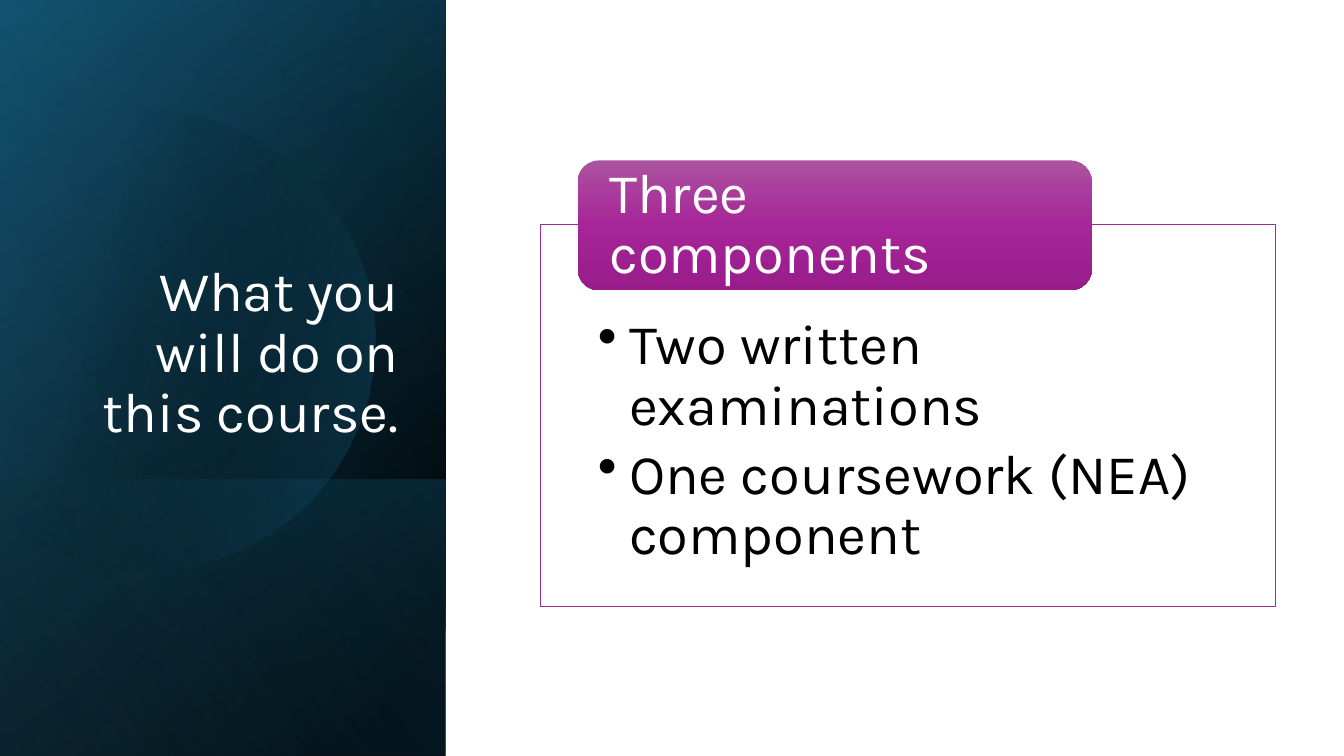
import math
from dataclasses import dataclass
from typing import NamedTuple

from lxml import etree
from pptx import Presentation
from pptx import util as u
from pptx.dml.color import RGBColor
from pptx.enum import shapes, text
from pptx.oxml import ns

PX = 9144


@dataclass(frozen=True)
class Theme:
    font: str = "Karla"
    size: int = 40
    light: str = "FFFFFF"
    dark: str = "000000"
    navy: str = "104862"
    blue: str = "156082"
    sky: str = "46B1E1"
    purple: str = "A02B93"
    header: tuple[str, str, str] = ("AC53A0", "A62598", "991C8B")


class Box(NamedTuple):
    left: int
    top: int
    width: int
    height: int


class Stop(NamedTuple):
    position: int
    color: str
    alpha: int = 100


class Gradient(NamedTuple):
    angle: int
    stops: tuple[Stop, ...]


class Layer(NamedTuple):
    box: Box
    gradient: Gradient


class Circle(NamedTuple):
    x: int
    y: int
    radius: int


class Label(NamedTuple):
    lines: tuple[str, ...]
    color: str
    insets: tuple[int, int, int, int]
    anchor: text.MSO_ANCHOR
    align: text.PP_ALIGN = text.PP_ALIGN.LEFT
    bullet_indent: int = 0
    space_after: int = 0


THEME = Theme()
SIDEBAR = Box(-154, 154, 750, 442)
LAYERS = (
    Layer(SIDEBAR, Gradient(50, (Stop(8, THEME.dark), Stop(100, THEME.navy)))),
    Layer(SIDEBAR, Gradient(30, (Stop(0, THEME.dark, 0), Stop(99, THEME.blue, 46)))),
    Layer(Box(84, 392, 274, 442), Gradient(130, (Stop(2, THEME.blue, 29), Stop(100, THEME.dark, 30)))),
)
GLOW = Layer(SIDEBAR, Gradient(120, (Stop(0, THEME.dark, 0), Stop(99, THEME.sky, 11))))
DISC = Circle(144, 338, 228)
DISC_GRADIENT = Gradient(14, (Stop(29, THEME.dark, 0), Stop(100, THEME.blue, 43)))
HEADER_GRADIENT = Gradient(90, tuple(Stop(50 * i, color) for i, color in enumerate(THEME.header)))

TITLE = Label(("What you will do on this course.",), THEME.light, (10, 5, 10, 5),
              text.MSO_ANCHOR.BOTTOM, text.PP_ALIGN.RIGHT)
HEADER = Label(("Three components",), THEME.light, (25, 6, 25, 6), text.MSO_ANCHOR.MIDDLE)
CONTENT = Label(("Two written examinations", "One coursework (NEA) component"), THEME.dark,
                (57, 91, 57, 31), text.MSO_ANCHOR.TOP, bullet_indent=31, space_after=6)


def emu(box: Box) -> list[int]:
    return [length * PX for length in box]


def fill_gradient(shape, gradient: Gradient) -> None:
    shape.shadow.inherit = False
    shape.line.fill.background()
    shape.fill.background()
    grad = etree.Element(ns.qn("a:gradFill"), rotWithShape="1")
    stops = etree.SubElement(grad, ns.qn("a:gsLst"))
    for stop in gradient.stops:
        entry = etree.SubElement(stops, ns.qn("a:gs"), pos=str(stop.position * 1000))
        color = etree.SubElement(entry, ns.qn("a:srgbClr"), val=stop.color)
        etree.SubElement(color, ns.qn("a:alpha"), val=str(stop.alpha * 1000))
    etree.SubElement(grad, ns.qn("a:lin"), ang=str(gradient.angle * 60000), scaled="0")
    properties = shape._element.spPr
    properties.replace(properties.find(ns.qn("a:noFill")), grad)


def add_layer(page, layer: Layer) -> None:
    shape = page.shapes.add_shape(shapes.MSO_SHAPE.RECTANGLE, *emu(layer.box))
    shape.rotation = 90
    shape._element.spPr.find(ns.qn("a:xfrm")).set("flipH", "1")
    fill_gradient(shape, layer.gradient)


def add_disc(page, circle: Circle, gradient: Gradient, steps: int = 90) -> None:
    reach = math.acos(-circle.x / circle.radius)
    angles = [reach * (2 * i / steps - 1) for i in range(steps + 1)]
    points = [(circle.x + circle.radius * math.cos(a), circle.y + circle.radius * math.sin(a))
              for a in angles]
    builder = page.shapes.build_freeform(*points[0], scale=PX)
    builder.add_line_segments(points[1:], close=True)
    fill_gradient(builder.convert_to_shape(), gradient)


def write(shape, label: Label) -> None:
    frame = shape.text_frame
    frame.word_wrap = True
    frame.vertical_anchor = label.anchor
    (frame.margin_left, frame.margin_top,
     frame.margin_right, frame.margin_bottom) = (inset * PX for inset in label.insets)
    for index, line in enumerate(label.lines):
        para = frame.add_paragraph() if index else frame.paragraphs[0]
        para.alignment = label.align
        para.line_spacing = 0.9
        para.space_after = u.Pt(label.space_after)
        if label.bullet_indent:
            properties = para._p.get_or_add_pPr()
            properties.set("marL", str(label.bullet_indent * PX))
            properties.set("indent", str(-label.bullet_indent * PX))
            etree.SubElement(properties, ns.qn("a:buChar"), char="•")
        span = para.add_run()
        span.text = line
        span.font.name = THEME.font
        span.font.size = u.Pt(THEME.size)
        span.font.color.rgb = RGBColor.from_string(label.color)


def main() -> None:
    """Build the course overview slide."""
    deck = Presentation()
    deck.slide_width, deck.slide_height = 1333 * PX, 750 * PX
    page = deck.slides.add_slide(deck.slide_layouts[6])

    for layer in LAYERS:
        add_layer(page, layer)
    add_disc(page, DISC, DISC_GRADIENT)
    add_layer(page, GLOW)
    write(page.shapes.add_textbox(*emu(Box(64, 184, 341, 262))), TITLE)

    panel = page.shapes.add_shape(shapes.MSO_SHAPE.RECTANGLE, *emu(Box(536, 223, 729, 379)))
    panel.shadow.inherit = False
    panel.fill.solid()
    panel.fill.fore_color.rgb = RGBColor.from_string(THEME.light)
    panel.line.color.rgb = RGBColor.from_string(THEME.purple)
    panel.line.width = u.Pt(1)
    write(panel, CONTENT)

    header = page.shapes.add_shape(shapes.MSO_SHAPE.ROUNDED_RECTANGLE, *emu(Box(573, 159, 510, 129)))
    fill_gradient(header, HEADER_GRADIENT)
    write(header, HEADER)

    deck.save("out.pptx")


if __name__ == "__main__":
    main()
